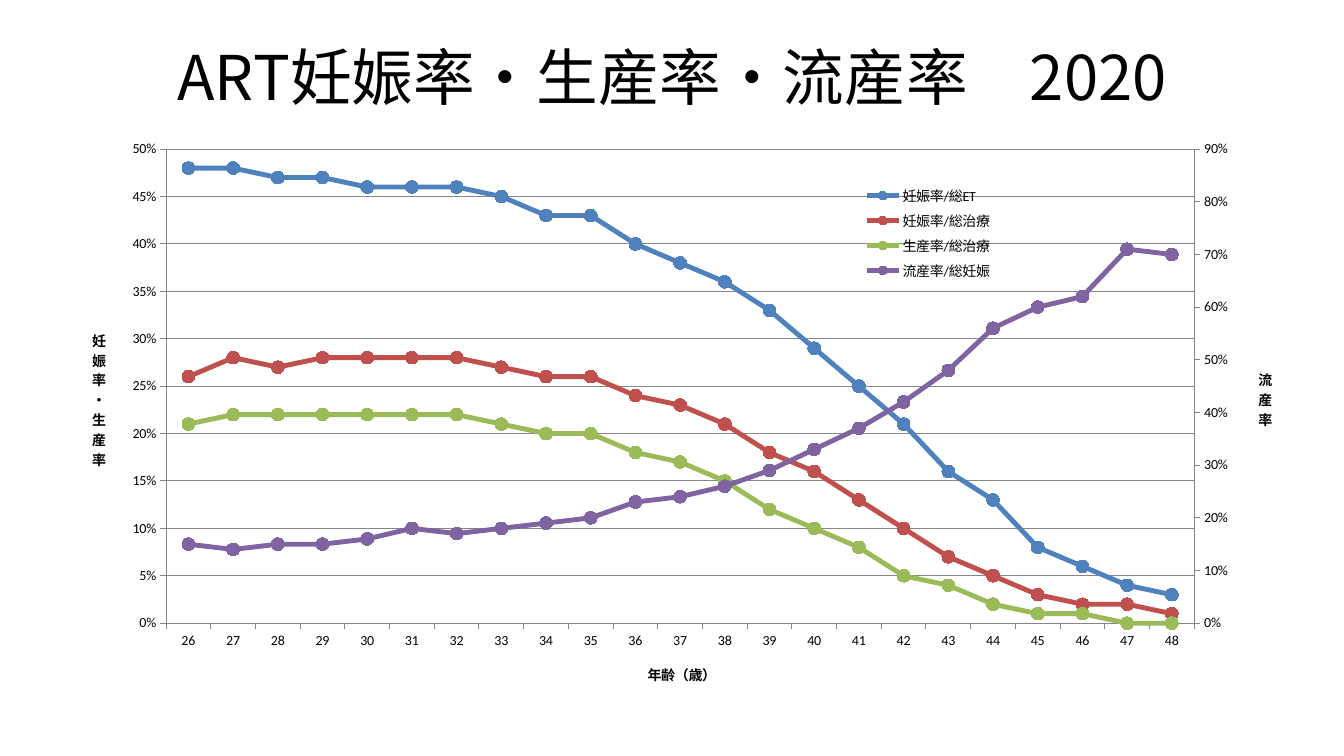
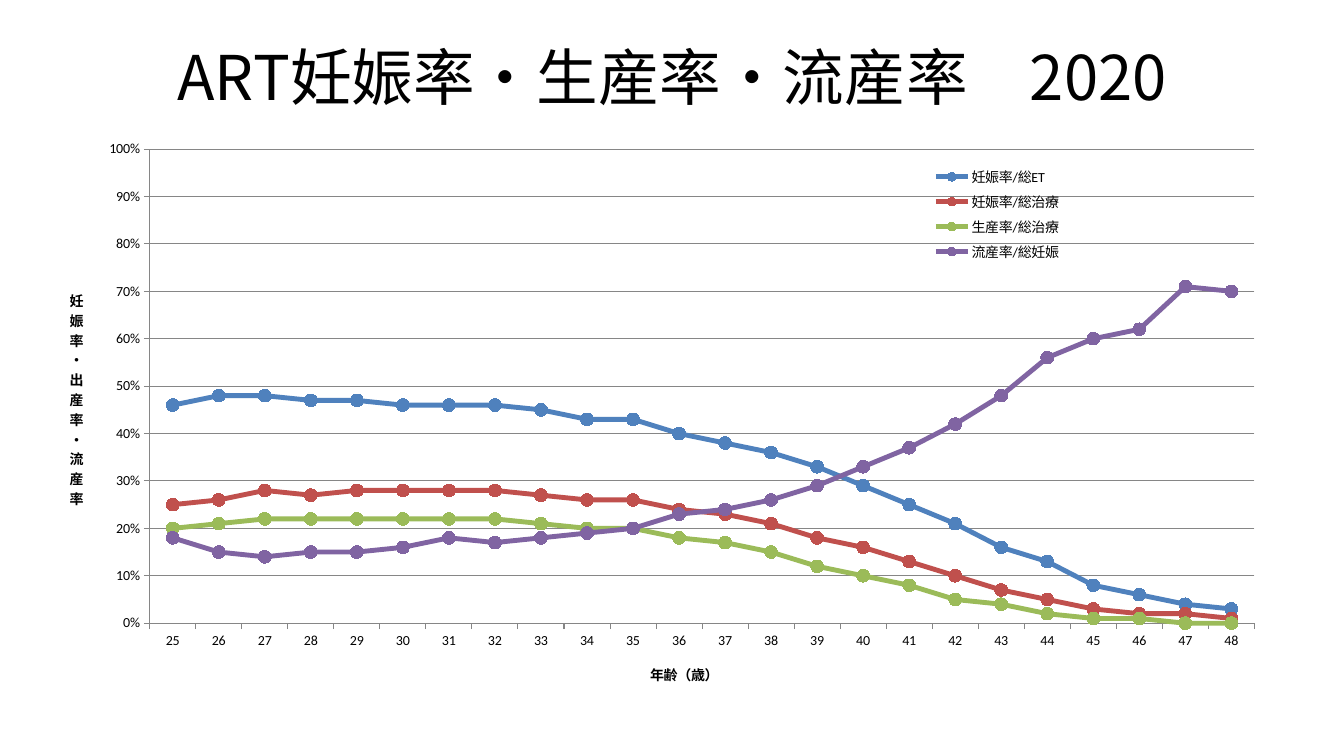
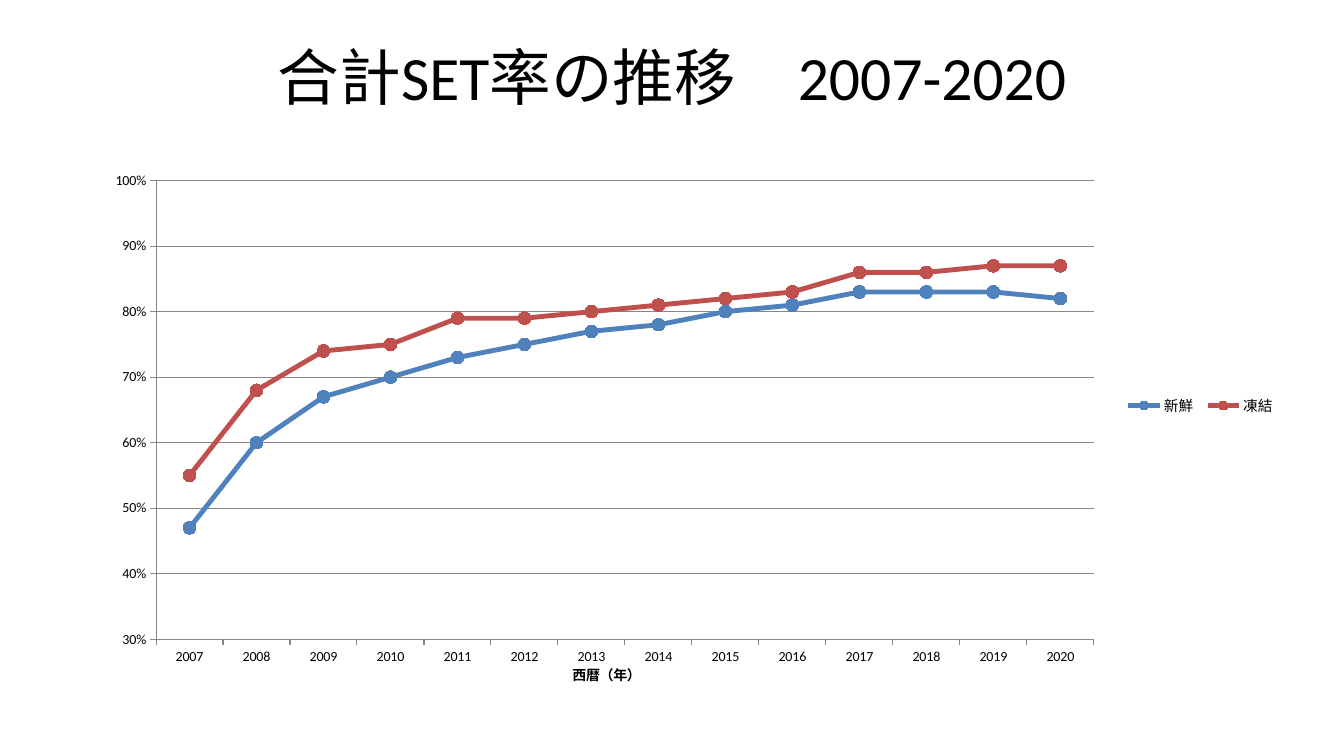
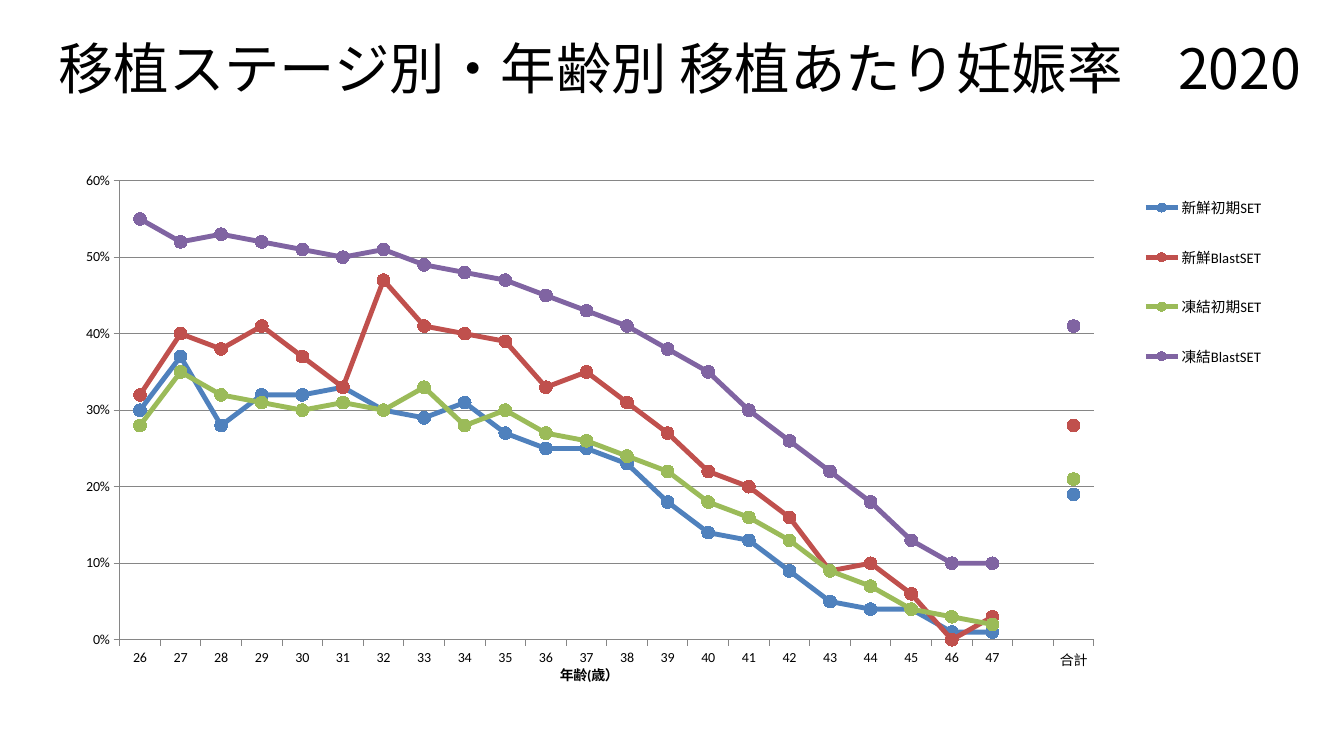
"""Build four slides of line charts on assisted reproduction results."""
from copy import deepcopy
from dataclasses import dataclass
from typing import Optional

from lxml.etree import SubElement
from pptx import Presentation
from pptx.chart.axis import CategoryAxis, ValueAxis
from pptx.chart.data import CategoryChartData
from pptx.dml.color import RGBColor
from pptx.enum.chart import XL_CHART_TYPE as ChartType
from pptx.enum.chart import XL_LEGEND_POSITION as LegendPosition
from pptx.enum.chart import XL_MARKER_STYLE as MarkerStyle
from pptx.enum.chart import XL_TICK_MARK as TickMark
from pptx.enum.text import MSO_ANCHOR as Anchor
from pptx.enum.text import MSO_AUTO_SIZE as AutoSize
from pptx.enum.text import PP_ALIGN as Align
from pptx.oxml.ns import qn
from pptx.oxml.xmlchemy import OxmlElement
from pptx.util import Cm, Pt


@dataclass(frozen=True)
class Theme:
    """Colours, fonts and type sizes of the deck."""
    text: RGBColor = RGBColor.from_string("000000")
    grid: RGBColor = RGBColor.from_string("868686")
    series: tuple = tuple(map(RGBColor.from_string, ("4F81BD", "C0504D", "9BBB59", "8064A2")))
    latin: str = "Calibri"
    japanese: str = "Noto Sans CJK JP"
    title_size: float = 44
    long_title_size: float = 39.6
    chart_size: float = 10
    legend_size: float = 10.5
    line_width: float = 3.5
    grid_width: float = 0.75
    marker_size: int = 9


@dataclass(frozen=True)
class Scale:
    """Range, title and title place (percent of the chart) of a value axis."""
    top: float
    step: float = 0.1
    bottom: float = 0
    title: str = ""
    title_at: tuple = ()
    visible: bool = True


@dataclass(frozen=True)
class LineChart:
    """Content of a line chart, with places in percent of the chart."""
    categories: list
    series: dict
    plot_at: tuple
    legend_at: tuple
    legend_size: float
    category_title: str
    category_title_at: tuple
    left: Scale
    right: Optional[Scale] = None


THEME = Theme()
TITLE_BOX = (1.7, 0.76, 30.48, 2.31)
LONG_TITLE_BOX = (0.91, 0.53, 32.44, 2.31)
CHART_BOX = (1.12, 3.3, 31.6, 14.05)

RATES_TITLE = "ART妊娠率・生産率・流産率\u30002020".replace("\u3000", "　")
RATE_AGES = [str(age) for age in range(25, 49)]
RATES = {
    "妊娠率/総ET": [46, 48, 48, 47, 47, 46, 46, 46, 45, 43, 43, 40,
                 38, 36, 33, 29, 25, 21, 16, 13, 8, 6, 4, 3],
    "妊娠率/総治療": [25, 26, 28, 27, 28, 28, 28, 28, 27, 26, 26, 24,
                 23, 21, 18, 16, 13, 10, 7, 5, 3, 2, 2, 1],
    "生産率/総治療": [20, 21, 22, 22, 22, 22, 22, 22, 21, 20, 20, 18,
                 17, 15, 12, 10, 8, 5, 4, 2, 1, 1, 0, 0],
    "流産率/総妊娠": [18, 15, 14, 15, 15, 16, 18, 17, 18, 19, 20, 23,
                 24, 26, 29, 33, 37, 42, 48, 56, 60, 62, 71, 70],
}
SET_YEARS = [str(year) for year in range(2007, 2021)]
SET_RATES = {
    "新鮮": [47, 60, 67, 70, 73, 75, 77, 78, 80, 81, 83, 83, 83, 82],
    "凍結": [55, 68, 74, 75, 79, 79, 80, 81, 82, 83, 86, 86, 87, 87],
}
STAGE_AGES = [str(age) for age in range(26, 48)] + ["", "合計"]
STAGE_RATES = {
    "新鮮初期SET": [30, 37, 28, 32, 32, 33, 30, 29, 31, 27, 25, 25,
                23, 18, 14, 13, 9, 5, 4, 4, 1, 1, None, 19],
    "新鮮BlastSET": [32, 40, 38, 41, 37, 33, 47, 41, 40, 39, 33, 35,
                   31, 27, 22, 20, 16, 9, 10, 6, 0, 3, None, 28],
    "凍結初期SET": [28, 35, 32, 31, 30, 31, 30, 33, 28, 30, 27, 26,
                24, 22, 18, 16, 13, 9, 7, 4, 3, 2, None, 21],
    "凍結BlastSET": [55, 52, 53, 52, 51, 50, 51, 49, 48, 47, 45, 43,
                   41, 38, 35, 30, 26, 22, 18, 13, 10, 10, None, 41],
}


def place(part, position, box, inner=False):
    """Give a chart part a manual layout in percent of the chart."""
    layout = part.find(qn("c:layout"))
    if layout is None:
        layout = OxmlElement("c:layout")
        part.insert(position, layout)
    manual = SubElement(layout, qn("c:manualLayout"))
    settings = [("layoutTarget", "inner")] if inner else []
    settings += [("xMode", "edge"), ("yMode", "edge")]
    settings += [(key, str(round(percent / 100, 4))) for key, percent in zip("xywh", box)]
    for tag, value in settings:
        SubElement(manual, qn(f"c:{tag}")).set("val", value)


def set_title(slide, text, box=TITLE_BOX, size=THEME.title_size, latin=THEME.japanese):
    """Fill, move and format the title placeholder."""
    title = slide.shapes.title
    title.left, title.top, title.width, title.height = map(Cm, box)
    frame = title.text_frame
    frame.text = text
    frame.auto_size = AutoSize.NONE
    frame.vertical_anchor = Anchor.MIDDLE
    paragraph = frame.paragraphs[0]
    paragraph.alignment = Align.CENTER
    paragraph.font.size = Pt(size)
    paragraph.font.name = latin
    paragraph.font.color.rgb = THEME.text
    east_asian = OxmlElement("a:ea")
    east_asian.set("typeface", THEME.japanese)
    paragraph.font._element.find(qn("a:latin")).addnext(east_asian)


def style_line(line, color=THEME.grid, width=THEME.grid_width):
    """Set the colour and width of a line."""
    line.color.rgb = color
    line.width = Pt(width)


def style_axis(axis, title, title_at, stacked=False):
    """Format the line, ticks and title of an axis."""
    axis.major_tick_mark = TickMark.OUTSIDE
    axis.minor_tick_mark = TickMark.NONE
    style_line(axis.format.line)
    axis.has_title = bool(title)
    if not title:
        return
    frame = axis.axis_title.text_frame
    frame.text = title
    font = frame.paragraphs[0].font
    font.size, font.bold, font.name = Pt(THEME.chart_size), True, THEME.latin
    if stacked:
        body = frame._txBody.bodyPr
        body.set("rot", "0")
        body.set("vert", "wordArtVertRtl")
    place(axis.axis_title._element, 1, title_at)


def style_value_axis(axis, scale, gridlines=True):
    """Format a value axis from its scale."""
    axis.minimum_scale, axis.maximum_scale = scale.bottom, scale.top
    axis.major_unit = scale.step
    axis.visible = scale.visible
    axis.has_major_gridlines = gridlines
    if gridlines:
        style_line(axis.major_gridlines.format.line)
    axis.tick_labels.number_format = "0%"
    axis.tick_labels.number_format_is_linked = False
    style_axis(axis, scale.title, scale.title_at, stacked=True)


def add_right_axis(chart, scale):
    """Move the last series to a second value axis on the right."""
    main_lines = chart.plots[0]._element
    right_lines = deepcopy(main_lines)
    main_lines.remove(main_lines.findall(qn("c:ser"))[-1])
    for series in right_lines.findall(qn("c:ser"))[:-1]:
        right_lines.remove(series)
    main_lines.addnext(right_lines)
    ages, rates = (deepcopy(axis._element) for axis in (chart.category_axis, chart.value_axis))
    age_id, rate_id = "5001", "5002"
    for axis_id, value in zip(right_lines.findall(qn("c:axId")), (age_id, rate_id)):
        axis_id.set("val", value)
    for axis, own, other in ((ages, age_id, rate_id), (rates, rate_id, age_id)):
        axis.find(qn("c:axId")).set("val", own)
        axis.find(qn("c:crossAx")).set("val", other)
        title = axis.find(qn("c:title"))
        if title is not None:
            axis.remove(title)
    rates.find(qn("c:axPos")).set("val", "r")
    rates.find(qn("c:crosses")).set("val", "max")
    chart.value_axis._element.addnext(rates)
    rates.addnext(ages)
    CategoryAxis(ages).visible = False
    style_value_axis(ValueAxis(rates), scale, gridlines=False)


def style_series(series, color):
    """Draw a series as a straight line with round markers."""
    series.smooth = False
    style_line(series.format.line, color, THEME.line_width)
    series.marker.style = MarkerStyle.CIRCLE
    series.marker.size = THEME.marker_size
    series.marker.format.fill.solid()
    series.marker.format.fill.fore_color.rgb = color
    style_line(series.marker.format.line, color)


def add_line_chart(slide, content):
    """Add a line chart with its axes and legend."""
    data = CategoryChartData(number_format="0%")
    data.categories = content.categories
    for name, percents in content.series.items():
        data.add_series(name, [None if p is None else p / 100 for p in percents])
    chart = slide.shapes.add_chart(ChartType.LINE_MARKERS, *map(Cm, CHART_BOX), data).chart
    chart.has_title = False
    chart.font.size, chart.font.name = Pt(THEME.chart_size), THEME.latin
    chart.font.color.rgb = THEME.text
    chart.plots[0].vary_by_categories = False
    for series, color in zip(chart.plots[0].series, THEME.series):
        style_series(series, color)
    style_axis(chart.category_axis, content.category_title, content.category_title_at)
    style_value_axis(chart.value_axis, content.left)
    chart.has_legend = True
    chart.legend.position = LegendPosition.RIGHT
    chart.legend.include_in_layout = False
    chart.legend.font.size = Pt(content.legend_size)
    place(chart.legend._element, 1, content.legend_at)
    place(chart._chartSpace.chart.plotArea, 0, content.plot_at, inner=True)
    if content.right:
        add_right_axis(chart, content.right)


def main():
    """Build and save the deck."""
    deck = Presentation()
    deck.slide_width, deck.slide_height = Cm(33.87), Cm(19.05)
    title_only = deck.slide_layouts[5]

    two_scales = deck.slides.add_slide(title_only)
    set_title(two_scales, RATES_TITLE)
    add_line_chart(two_scales, LineChart(
        RATE_AGES[1:], {name: rates[1:] for name, rates in RATES.items()},
        plot_at=(9.7, 3.3, 82, 85.8), legend_at=(65, 9, 11, 19),
        legend_size=THEME.chart_size,
        category_title="年齢（歳）", category_title_at=(47.9, 95.8),
        left=Scale(0.5, 0.05, title="妊娠率・生産率", title_at=(3.6, 35.4)),
        right=Scale(0.9, title="流産率", title_at=(96.6, 42.5))))

    one_scale = deck.slides.add_slide(title_only)
    set_title(one_scale, RATES_TITLE)
    add_line_chart(one_scale, LineChart(
        RATE_AGES, RATES,
        plot_at=(8.4, 3.3, 88.1, 85.8), legend_at=(70.5, 5.6, 11, 19),
        legend_size=THEME.chart_size,
        category_title="年齢（歳）", category_title_at=(48.1, 95.8),
        left=Scale(1, title="妊娠率・出産率・流産率", title_at=(1.8, 28.2)),
        right=Scale(1, visible=False)))

    set_trend = deck.slides.add_slide(title_only)
    set_title(set_trend, "合計SET率の推移　2007-2020", latin=THEME.latin)
    add_line_chart(set_trend, LineChart(
        SET_YEARS, SET_RATES,
        plot_at=(8.9, 9, 74.8, 83), legend_at=(85.7, 47.2, 13, 5),
        legend_size=THEME.legend_size,
        category_title="西暦（年）", category_title_at=(41.9, 95.8),
        left=Scale(1, bottom=0.3)))

    by_stage = deck.slides.add_slide(title_only)
    set_title(by_stage, "移植ステージ別・年齢別 移植あたり妊娠率　2020",
              LONG_TITLE_BOX, THEME.long_title_size)
    add_line_chart(by_stage, LineChart(
        STAGE_AGES, STAGE_RATES,
        plot_at=(6, 9, 77.7, 83), legend_at=(87.2, 6.8, 10.5, 41),
        legend_size=THEME.legend_size,
        category_title="年齢(歳）", category_title_at=(40.9, 95.7),
        left=Scale(0.6)))

    deck.save("out.pptx")


if __name__ == "__main__":
    main()
